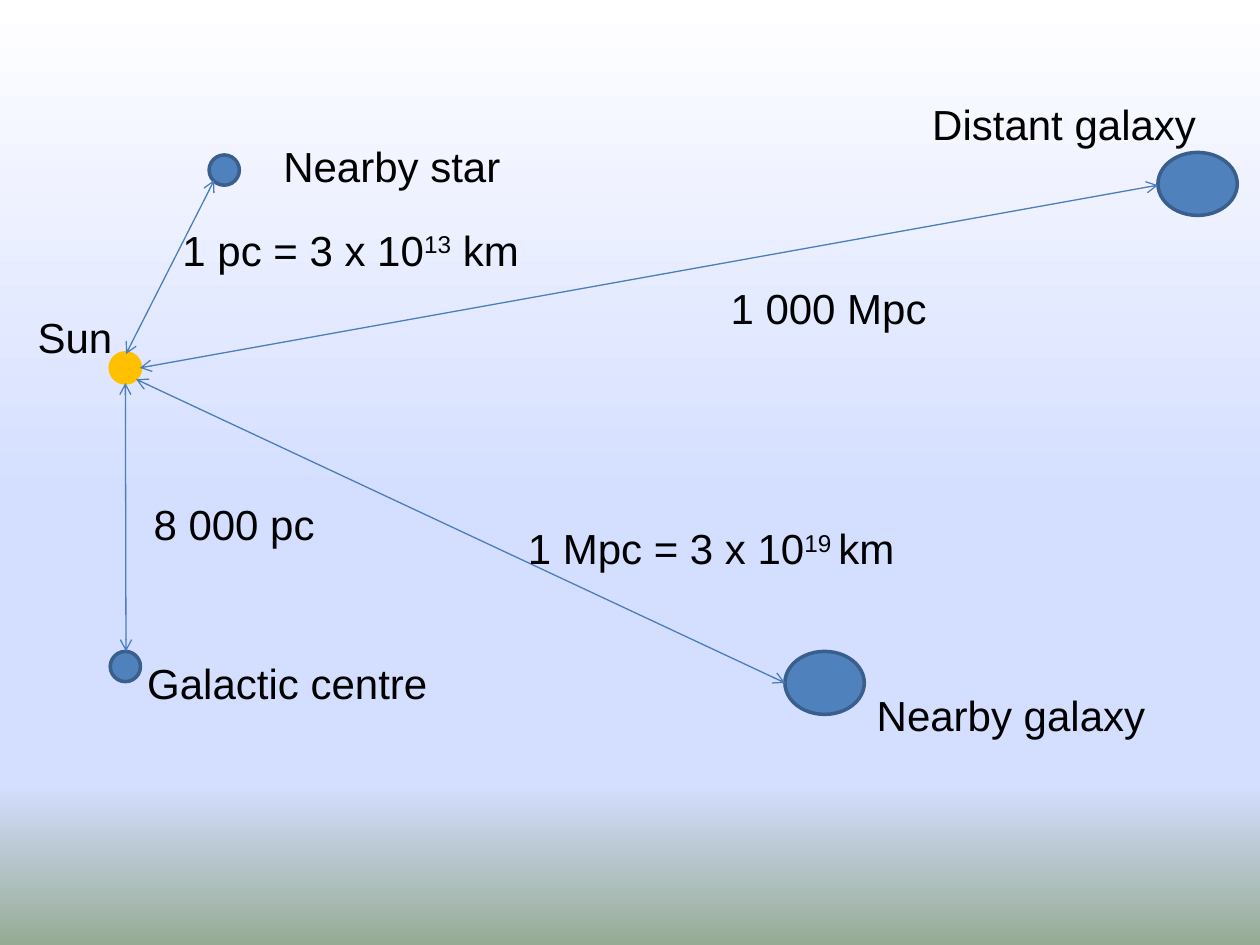
from copy import deepcopy

from pptx import Presentation
from pptx import util as u
from pptx.dml.color import RGBColor
from pptx.enum import shapes, text
from pptx.oxml.ns import qn
from pptx.oxml.xmlchemy import OxmlElement

BLACK = RGBColor(0x00, 0x00, 0x00)
GOLD = RGBColor(0xFF, 0xC0, 0x00)
BLUE = RGBColor(0x4F, 0x81, 0xBD)
EDGE = RGBColor(0x3A, 0x5F, 0x8C)
RAY = RGBColor(0x4B, 0x7E, 0xBC)
WHITE = RGBColor(0xFF, 0xFF, 0xFF)
SKY = RGBColor(0xD4, 0xDE, 0xFF)
MOSS = RGBColor(0x96, 0xAB, 0x94)


class Chart:
    """Draws on a slide split into 100 columns and 75 rows."""
    font, size = "Arial", 24
    cols, rows = 100, 75

    def __init__(self, deck):
        self.wide, self.high = deck.slide_width, deck.slide_height
        self.slide = deck.slides.add_slide(deck.slide_layouts[6])

    def grid(self, *spans):
        """Turn column, row, column, row ... into lengths."""
        unit = (self.wide / self.cols, self.high / self.rows)
        return [u.Emu(round(n * unit[i % 2])) for i, n in enumerate(spans)]

    def sky(self, stops):
        fill = self.slide.background.fill
        fill.gradient()
        fill.gradient_angle = 270
        group = next(self.slide.element.iter(qn("a:gsLst")))
        while len(group) < len(stops):
            group.append(deepcopy(group[0]))
        for stop, (place, color) in zip(fill.gradient_stops, stops):
            stop.position = place
            stop.color.rgb = color

    def disc(self, x, y, w, h, fill=BLUE, edge=EDGE):
        disc = self.slide.shapes.add_shape(shapes.MSO_SHAPE.OVAL,
                                           *self.grid(x, y, w, h))
        disc.shadow.inherit = False
        disc.fill.solid()
        disc.fill.fore_color.rgb = fill
        disc.line.color.rgb = edge
        disc.line.width = u.Pt(2)

    def ray(self, x1, y1, x2, y2):
        ray = self.slide.shapes.add_connector(shapes.MSO_CONNECTOR.STRAIGHT,
                                              *self.grid(x1, y1, x2, y2))
        ray.line.color.rgb = RAY
        ray.line.width = u.Pt(0.75)
        line = next(ray.element.iter(qn("a:ln")))
        for name in ("a:headEnd", "a:tailEnd"):
            tip = OxmlElement(name)
            tip.set("type", "arrow")
            line.append(tip)
        ray.element.spPr.append(OxmlElement("a:effectLst"))

    def label(self, x, y, w, words, power="", rest=""):
        box = self.slide.shapes.add_textbox(*self.grid(x, y, w, 5))
        frame = box.text_frame
        frame.word_wrap = False
        frame.auto_size = text.MSO_AUTO_SIZE.SHAPE_TO_FIT_TEXT
        frame.text = words
        para = frame.paragraphs[0]
        for part in filter(None, (power, rest)):
            para.add_run().text = part
        for run in para.runs:
            run.font.name = self.font
            run.font.size = u.Pt(self.size)
            run.font.color.rgb = BLACK
        if power:
            marks = list(box.element.iter(qn("a:rPr")))
            marks[1].set("baseline", "30000")


def main():
    deck = Presentation()
    deck.slide_width, deck.slide_height = u.Inches(10), u.Inches(7.5)
    chart = Chart(deck)
    chart.sky([(0, WHITE), (0.53, SKY), (0.83, SKY), (1, MOSS)])

    # Sun, stars and galaxies
    star, galaxy = (2.4, 2.4), (6.3, 5)
    chart.disc(8.75, 28, *star, fill=GOLD, edge=GOLD)
    chart.disc(8.75, 51.7, *star)
    chart.disc(16.6, 12.3, *star)
    chart.disc(62.3, 51.7, *galaxy)
    chart.disc(91.9, 12.1, *galaxy)

    # Distances from the Sun
    for ends in ((10, 28.1, 17, 14.3), (9.95, 30.4, 10, 51.7),
                 (10.8, 30.1, 62.3, 54.2), (11.1, 29.2, 91.9, 14.7)):
        chart.ray(*ends)

    # Names
    for name in ((2, 24.2, 8, "Sun"),
                 (21.5, 10.7, 19.4, "Nearby star"),
                 (10.7, 51.7, 24.5, "Galactic centre"),
                 (68.6, 54.2, 23.6, "Nearby galaxy"),
                 (73, 7.3, 23.2, "Distant galaxy")):
        chart.label(*name)

    # Lengths
    chart.label(13.5, 17.3, 29.3, "1 pc = 3 x 10", "13", " km")
    chart.label(11.2, 39.1, 14.9, "8 000 pc")
    chart.label(40.9, 41, 32.1, "1 Mpc = 3 x 10", "19 ", "km")
    chart.label(57, 21.9, 17.7, "1 000 Mpc")

    deck.save("out.pptx")


if __name__ == "__main__":
    main()
